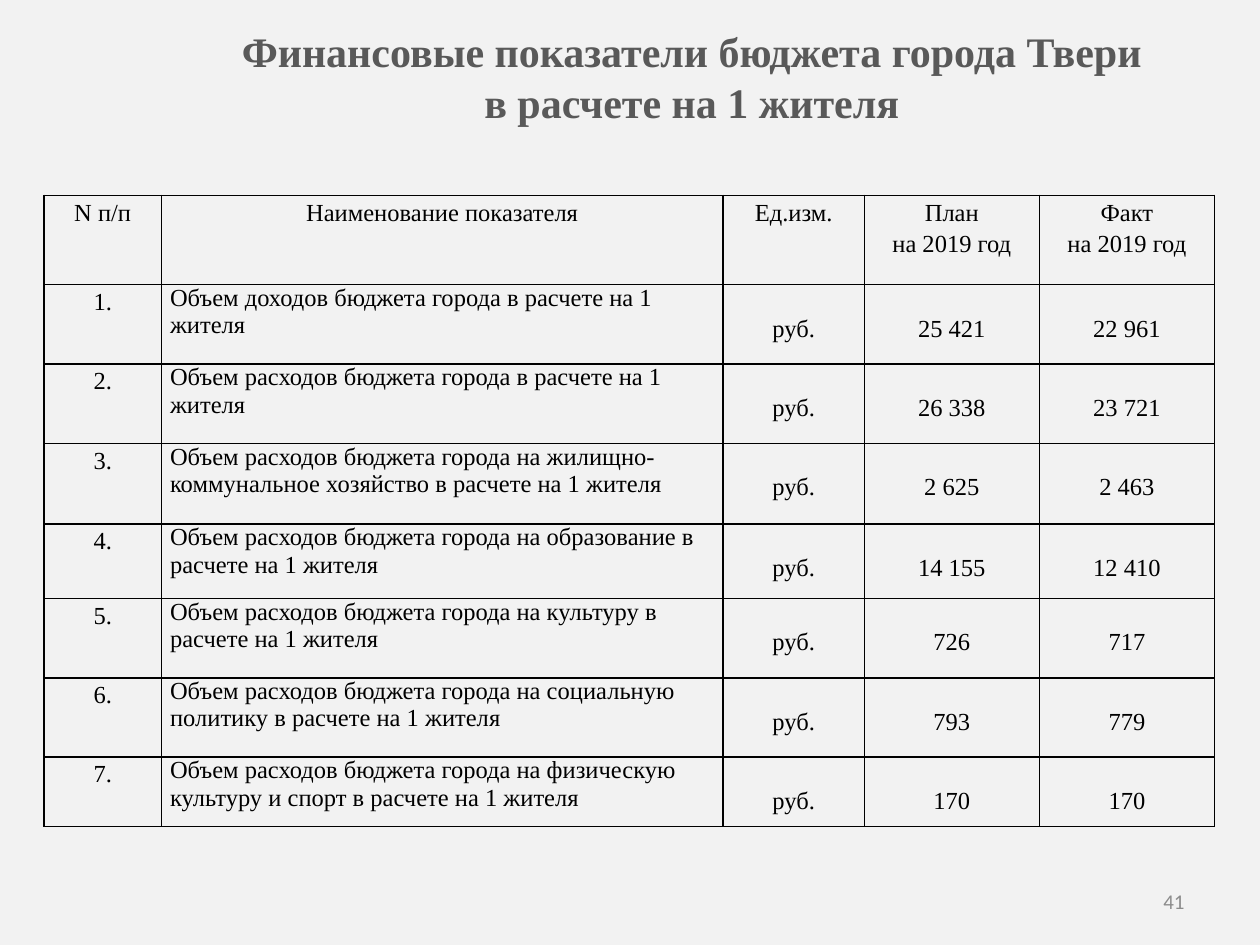
from lxml.etree import SubElement
from pptx import Presentation
from pptx.dml.color import RGBColor
from pptx.enum.text import MSO_ANCHOR as Anchor, PP_ALIGN as Align
from pptx.oxml.ns import qn
from pptx.util import Inches, Pt

HEADERS = ["N п/п", "Наименование показателя", "Ед.изм.", "План\nна 2019 год", "Факт\nна 2019 год"]
INDICATORS = [
    ("Объем доходов бюджета города в расчете на 1 жителя", "25 421", "22 961"),
    ("Объем расходов бюджета города в расчете на 1 жителя", "26 338", "23 721"),
    ("Объем расходов бюджета города на жилищно-коммунальное хозяйство в расчете на 1 жителя", "2 625", "2 463"),
    ("Объем расходов бюджета города на образование в расчете на 1 жителя", "14 155", "12 410"),
    ("Объем расходов бюджета города на культуру в расчете на 1 жителя", "726", "717"),
    ("Объем расходов бюджета города на социальную политику в расчете на 1 жителя", "793", "779"),
    ("Объем расходов бюджета города на физическую культуру и спорт в расчете на 1 жителя", "170", "170"),
]
COLUMN_WIDTHS = [0.93, 4.46, 1.12, 1.39, 1.39]
ROW_HEIGHTS = [0.71, 0.63, 0.63, 0.64, 0.59, 0.63, 0.63, 0.55]


def color(value):
    return RGBColor.from_string(value)


class BudgetPage:
    title_font = {"name": "Times New Roman", "size": Pt(24), "bold": True, "color": "595959"}
    table_font = {"name": "Times New Roman", "size": Pt(14), "bold": False, "color": "000000"}
    number_font = {"name": "Calibri", "size": Pt(12), "color": "8C8C8C"}
    centered = {"alignment": Align.CENTER, "line_spacing": 1.15}
    plain = {"alignment": Align.LEFT}

    def __init__(self, deck, background):
        self.page = deck.slides.add_slide(deck.slide_layouts[6])
        fill = self.page.background.fill
        fill.solid()
        fill.fore_color.rgb = color(background)

    def fill_frame(self, frame, text, font, layout):
        frame.word_wrap = True
        for index, line in enumerate(text.split("\n")):
            para = frame.add_paragraph() if index else frame.paragraphs[0]
            for name, value in layout.items():
                setattr(para, name, value)
            span = para.add_run()
            span.text = line
            for name, value in font.items():
                if name == "color":
                    span.font.color.rgb = color(value)
                else:
                    setattr(span.font, name, value)

    def text(self, bounds, text, font, alignment):
        box = self.page.shapes.add_textbox(*map(Inches, bounds))
        box.text_frame.vertical_anchor = Anchor.MIDDLE
        self.fill_frame(box.text_frame, text, font, {"alignment": alignment})

    def borders(self, cell):
        properties = cell._tc.get_or_add_tcPr()
        for side in ("L", "R", "T", "B"):
            line = SubElement(properties, qn(f"a:ln{side}"), w=str(Pt(1)))
            fill = SubElement(line, qn("a:solidFill"))
            SubElement(fill, qn("a:srgbClr"), val="000000")

    def cell(self, cell, text, layout, top):
        margins = {"margin_left": 0.07, "margin_right": 0.07, "margin_top": top, "margin_bottom": 0}
        for name, value in margins.items():
            setattr(cell, name, Inches(value))
        self.borders(cell)
        cell.fill.background()
        self.fill_frame(cell.text_frame, text, self.table_font, layout)

    def table(self, left, top, rows):
        size = sum(COLUMN_WIDTHS), sum(ROW_HEIGHTS)
        bounds = map(Inches, (left, top, *size))
        table = self.page.shapes.add_table(len(rows), len(COLUMN_WIDTHS), *bounds).table
        table.first_row = table.horz_banding = False
        for column, width in zip(table.columns, COLUMN_WIDTHS):
            column.width = Inches(width)
        for row, height in zip(table.rows, ROW_HEIGHTS):
            row.height = Inches(height)
        for row_index, values in enumerate(rows):
            for column_index, value in enumerate(values):
                is_name = row_index > 0 and column_index == 1
                is_value = row_index > 0 and column_index > 1
                layout = self.plain if is_name else self.centered
                self.cell(table.cell(row_index, column_index), value, layout, 0.21 if is_value else 0)


def main():
    deck = Presentation()
    deck.slide_width, deck.slide_height = Inches(10), Inches(7.5)
    page = BudgetPage(deck, "F2F2F2")
    page.text((7.17, 6.95, 2.33, 0.4), "41", page.number_font, Align.RIGHT)
    title = "Финансовые показатели бюджета города Твери\nв расчете на 1 жителя"
    page.text((1.02, 0.29, 8.94, 0.63), title, page.title_font, Align.CENTER)
    rows = [(f"{number}.", name, "руб.", plan, fact)
            for number, (name, plan, fact) in enumerate(INDICATORS, 1)]
    page.table(0.35, 1.55, [HEADERS, *rows])
    deck.save("out.pptx")


if __name__ == "__main__":
    main()
